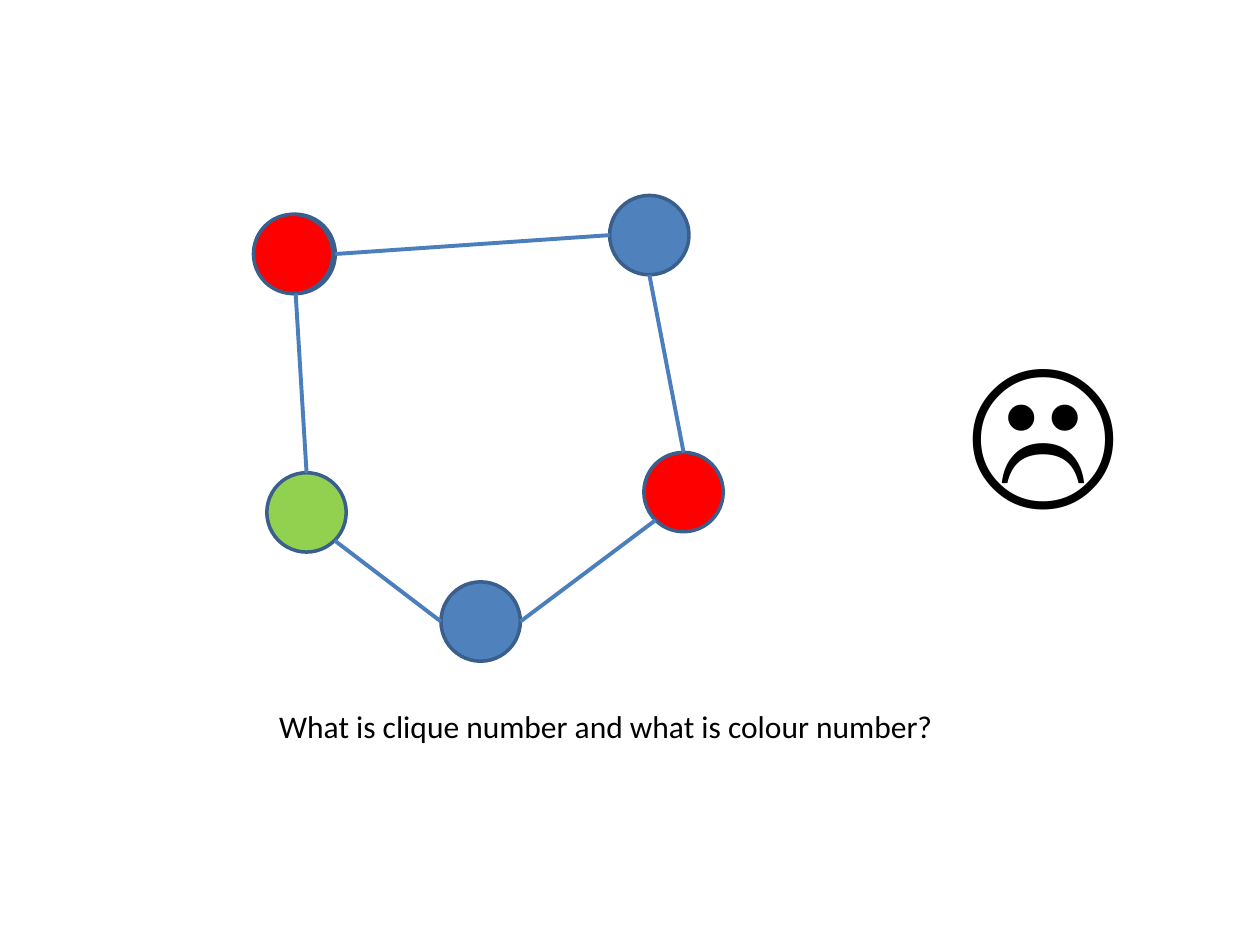
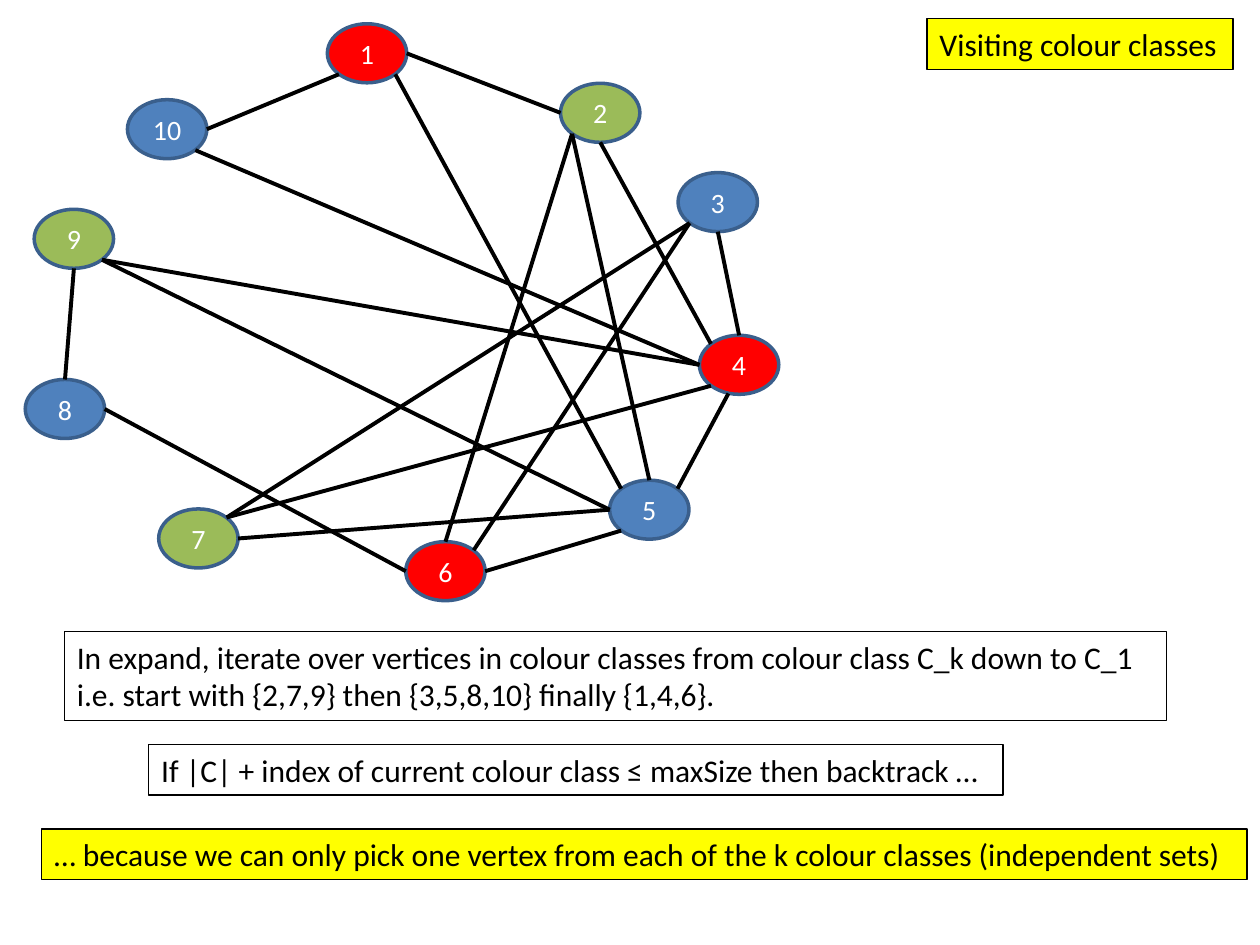
from lxml import etree
from pptx import Presentation
from pptx.dml.color import RGBColor
from pptx.enum.shapes import MSO_CONNECTOR, MSO_SHAPE
from pptx.enum.text import MSO_ANCHOR, MSO_AUTO_SIZE, PP_ALIGN
from pptx.oxml.ns import qn
from pptx.util import Cm, Pt

STRAIGHT = MSO_CONNECTOR.STRAIGHT
OVAL = MSO_SHAPE.OVAL
MIDDLE = MSO_ANCHOR.MIDDLE
FIT_SHAPE = MSO_AUTO_SIZE.SHAPE_TO_FIT_TEXT
LEFT, CENTER = PP_ALIGN.LEFT, PP_ALIGN.CENTER

FONT = "Calibri"
BLACK = RGBColor(0x00, 0x00, 0x00)
WHITE = RGBColor(0xFF, 0xFF, 0xFF)
YELLOW = RGBColor(0xFF, 0xFF, 0x00)
RED = RGBColor(0xFF, 0x00, 0x00)
BLUE = RGBColor(0x4F, 0x81, 0xBD)
LIME = RGBColor(0x92, 0xD0, 0x50)
OLIVE = RGBColor(0x9B, 0xBB, 0x59)
OUTLINE = RGBColor(0x3A, 0x5F, 0x8C)
EDGE_BLUE = RGBColor(0x4B, 0x7E, 0xBC)

# Lengths are centimetres. Vertex: left, top, fill.
CYCLE_SIZE = (1.6, 1.6)
CYCLE_VERTICES = {
    "corner": (5.16, 4.32, BLUE),
    "lower left": (5.38, 9.53, LIME),
    "lower right": (12.98, 9.12, RED),
    "upper right": (12.29, 3.94, BLUE),
    "corner recoloured": (5.11, 4.32, RED),
    "bottom": (8.89, 11.73, BLUE),
}
# Edge: vertex, side it leaves from, vertex, side it arrives at.
CYCLE_EDGES = [
    ("corner", "E", "upper right", "W"),
    ("lower left", "SE", "bottom", "W"),
    ("lower right", "N", "upper right", "S"),
    ("corner", "S", "lower left", "N"),
    ("lower right", "SW", "bottom", "E"),
]

CLASS_SIZE = (1.6, 1.19)
CLASS_VERTICES = {
    6: (8.18, 10.92, RED),
    4: (14.1, 6.76, RED),
    9: (0.69, 4.22, OLIVE),
    10: (2.57, 2.01, BLUE),
    1: (6.6, 0.48, RED),
    5: (12.29, 9.68, BLUE),
    3: (13.67, 3.48, BLUE),
    2: (11.3, 1.68, OLIVE),
    7: (3.2, 10.26, OLIVE),
    8: (0.51, 7.65, BLUE),
}
CLASS_EDGES = [
    (1, "E", 2, "W"), (1, "SE", 5, "NW"), (10, "E", 1, "SW"),
    (2, "S", 4, "NW"), (8, "N", 9, "S"), (5, "N", 2, "SW"),
    (2, "SW", 6, "N"), (4, "N", 3, "S"), (3, "SW", 6, "NE"),
    (3, "SW", 7, "NE"), (5, "NE", 4, "SSW"), (7, "NE", 4, "SW"),
    (9, "SE", 4, "W"), (10, "SE", 4, "W"), (6, "E", 5, "SW"),
    (7, "E", 5, "W"), (9, "SE", 5, "W"), (6, "W", 8, "E"),
]

# Box: left, top, width, height, fill, lines of text.
CLASS_NOTES = [
    (1.3, 12.73, 22.22, 1.8, None, [
        "In expand, iterate over vertices in colour classes from colour class C_k down to C_1",
        "i.e. start with {2,7,9} then {3,5,8,10} finally {1,4,6}.",
    ]),
    (18.69, 0.38, 6.17, 1.02, YELLOW, ["Visiting colour classes"]),
    (3, 15.01, 17.22, 1.02, None,
     ["If |C| + index of current colour class ≤ maxSize then backtrack …"]),
    (0.84, 16.71, 24.3, 1.02, YELLOW,
     ["… because we can only pick one vertex from each of the k colour classes (independent sets)"]),
]

# Sides of an ellipse as offsets from its centre, in half widths and half heights.
SIDES = {
    "N": (0, -1), "S": (0, 1), "W": (-1, 0), "E": (1, 0),
    "NW": (-0.71, -0.71), "NE": (0.71, -0.71),
    "SW": (-0.71, 0.71), "SE": (0.71, 0.71), "SSW": (-0.27, 0.97),
}


def write_text(frame, lines, size=18, color=BLACK, align=LEFT):
    for index, line in enumerate(lines):
        paragraph = frame.paragraphs[0] if index == 0 else frame.add_paragraph()
        paragraph.alignment = align
        run = paragraph.add_run()
        run.text = line
        run.font.name = FONT
        run.font.size = Pt(size)
        run.font.color.rgb = color


def add_text_box(slide, box, lines, size=18, wrap=False, fill=None, outlined=False):
    shape = slide.shapes.add_textbox(*map(Cm, box))
    shape.text_frame.word_wrap = wrap
    shape.text_frame.auto_size = FIT_SHAPE
    if fill is not None:
        shape.fill.solid()
        shape.fill.fore_color.rgb = fill
    if outlined:
        shape.line.color.rgb = BLACK
        shape.line.width = Pt(0.75)
    write_text(shape.text_frame, lines, size=size)


def add_vertex(slide, left, top, size, fill, label=None):
    shape = slide.shapes.add_shape(OVAL, *map(Cm, (left, top, *size)))
    shape.shadow.inherit = False
    shape.fill.solid()
    shape.fill.fore_color.rgb = fill
    shape.line.color.rgb = OUTLINE
    shape.line.width = Pt(2)
    if label is not None:
        shape.text_frame.vertical_anchor = MIDDLE
        write_text(shape.text_frame, [label], size=16, color=WHITE, align=CENTER)


def side_point(vertex, size, side):
    """Return where the given side of a vertex lies on the slide."""
    return [Cm(start + length / 2 * (1 + offset))
            for start, length, offset in zip(vertex[:2], size, SIDES[side])]


def add_graph(slide, vertices, edges, size, edge_color, labelled):
    for name, (left, top, fill) in vertices.items():
        add_vertex(slide, left, top, size, fill, str(name) if labelled else None)
    for first, first_side, second, second_side in edges:
        begin = side_point(vertices[first], size, first_side)
        end = side_point(vertices[second], size, second_side)
        connector = slide.shapes.add_connector(STRAIGHT, *begin, *end)
        connector.line.color.rgb = edge_color
        connector.line.width = Pt(2.25)
        etree.SubElement(connector._element.spPr, qn("a:effectLst"))


def add_cycle_slide(presentation):
    slide = presentation.slides.add_slide(presentation.slide_layouts[6])
    add_graph(slide, CYCLE_VERTICES, CYCLE_EDGES, CYCLE_SIZE, EDGE_BLUE, labelled=False)
    add_text_box(slide, (5.38, 14.12, 13.84, 1.02),
                 ["What is clique number and what is colour number?"])
    add_text_box(slide, (19.23, 6.32, 2.67, 4.37), ["☹"], size=96, wrap=True)


def add_colour_class_slide(presentation):
    slide = presentation.slides.add_slide(presentation.slide_layouts[6])
    add_graph(slide, CLASS_VERTICES, CLASS_EDGES, CLASS_SIZE, BLACK, labelled=True)
    for *box, fill, lines in CLASS_NOTES:
        add_text_box(slide, box, lines, fill=fill, outlined=True)


def main():
    presentation = Presentation()
    presentation.slide_width = Cm(25.4)
    presentation.slide_height = Cm(19.05)
    add_cycle_slide(presentation)
    add_colour_class_slide(presentation)
    presentation.save("out.pptx")


if __name__ == "__main__":
    main()
